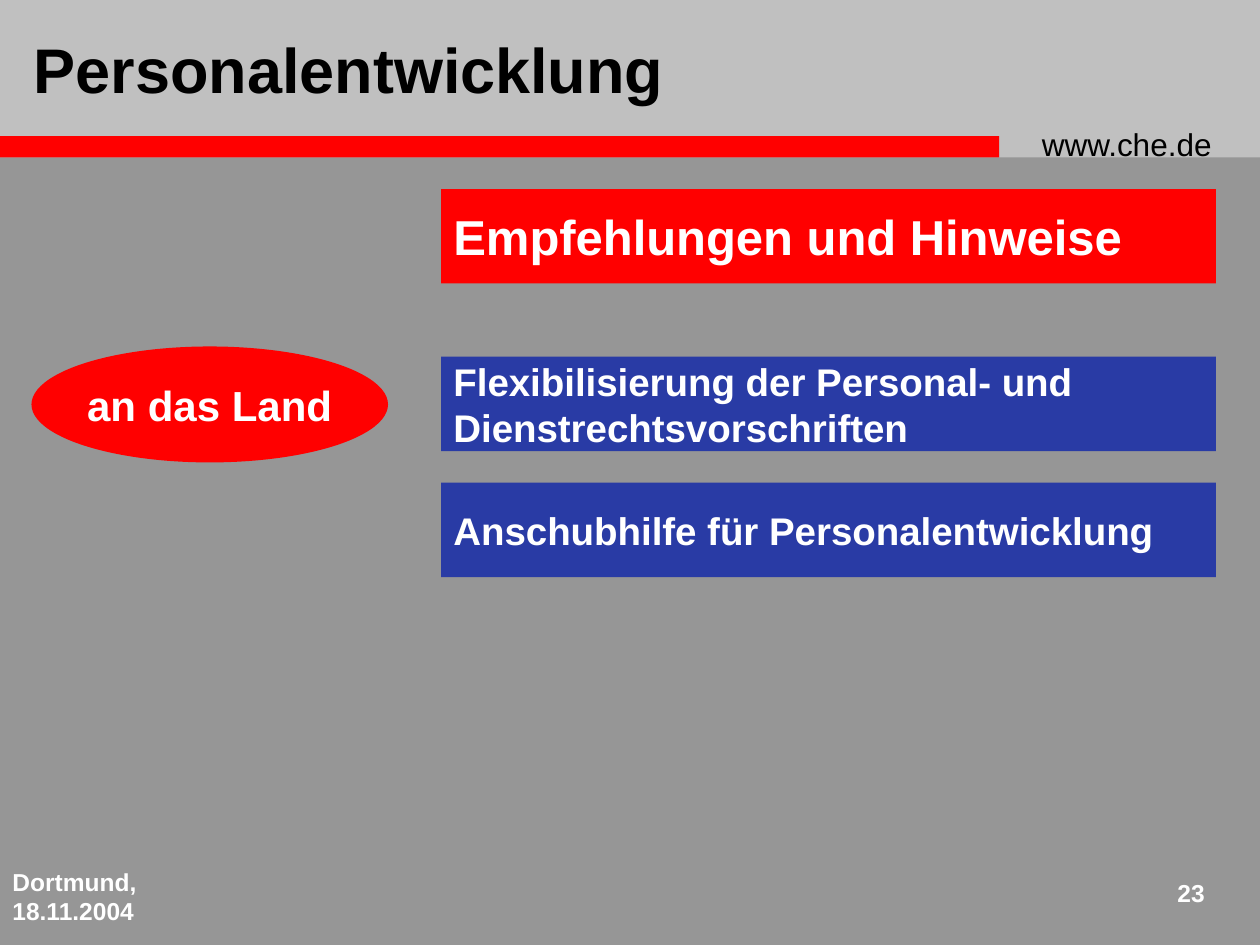
from pptx import Presentation
from pptx.dml.color import RGBColor
from pptx.enum.shapes import MSO_SHAPE
from pptx.enum.text import MSO_ANCHOR, PP_ALIGN
from pptx.util import Inches, Pt

COLORS = {
    "background": "969696",
    "header": "C0C0C0",
    "red": "FF0000",
    "blue": "293BA5",
    "white": "FFFFFF",
    "black": "000000",
}
FONT = "Arial"
BOX_LEFT, BOX_WIDTH, BOX_HEIGHT = 3.5, 6.15, 0.75


def color(key):
    return RGBColor.from_string(COLORS[key])


def write(element, lines, size, ink="white", bold=True, align=PP_ALIGN.LEFT,
          anchor=MSO_ANCHOR.TOP, wrap=True):
    frame = element.text_frame
    frame.word_wrap = wrap
    frame.vertical_anchor = anchor
    for index, line in enumerate(lines):
        paragraph = frame.add_paragraph() if index else frame.paragraphs[0]
        paragraph.text = line
        paragraph.alignment = align
        paragraph.font.name = FONT
        paragraph.font.size = Pt(size)
        paragraph.font.bold = bold
        paragraph.font.color.rgb = color(ink)


def add_panel(slide, bounds, fill, kind=MSO_SHAPE.RECTANGLE):
    panel = slide.shapes.add_shape(kind, *map(Inches, bounds))
    panel.shadow.inherit = False
    panel.fill.solid()
    panel.fill.fore_color.rgb = color(fill)
    panel.line.fill.background()
    return panel


def add_label(slide, bounds, text, size, **style):
    label = slide.shapes.add_textbox(*map(Inches, bounds))
    write(label, [text], size, **style)


def add_message(slide, top, lines, size, fill):
    message = add_panel(slide, (BOX_LEFT, top, BOX_WIDTH, BOX_HEIGHT), fill)
    write(message, lines, size, anchor=MSO_ANCHOR.MIDDLE, wrap=False)


def add_header(slide):
    add_panel(slide, (0, 0, 10, 1.25), "header")
    add_panel(slide, (0, 1.08, 7.93, 0.17), "red")
    add_label(slide, (8.17, 0.94, 1.75, 0.4), "www.che.de", 18,
              ink="black", bold=False)
    add_label(slide, (0.17, 0.17, 5.84, 0.75), "Personalentwicklung", 36,
              ink="black", anchor=MSO_ANCHOR.MIDDLE)


def add_footer(slide):
    add_label(slide, (0, 6.83, 2.08, 0.5), "Dortmund, 18.11.2004", 14)
    add_label(slide, (9.08, 6.92, 0.58, 0.42), "23", 14, align=PP_ALIGN.RIGHT)


def main():
    presentation = Presentation()
    presentation.slide_width = Inches(10)
    presentation.slide_height = Inches(7.5)
    slide = presentation.slides.add_slide(presentation.slide_layouts[6])
    slide.background.fill.solid()
    slide.background.fill.fore_color.rgb = color("background")

    add_header(slide)
    add_message(slide, 1.5, ["Empfehlungen und Hinweise"], 28, "red")
    add_message(slide, 2.83, ["Flexibilisierung der Personal- und",
                              "Dienstrechtsvorschriften"], 22, "blue")
    add_message(slide, 3.83, ["Anschubhilfe für Personalentwicklung"], 22, "blue")
    addressee = add_panel(slide, (0.25, 2.75, 2.83, 0.92), "red", MSO_SHAPE.OVAL)
    write(addressee, ["an das Land"], 24, align=PP_ALIGN.CENTER,
          anchor=MSO_ANCHOR.MIDDLE, wrap=False)
    add_footer(slide)

    presentation.save("out.pptx")


if __name__ == "__main__":
    main()
